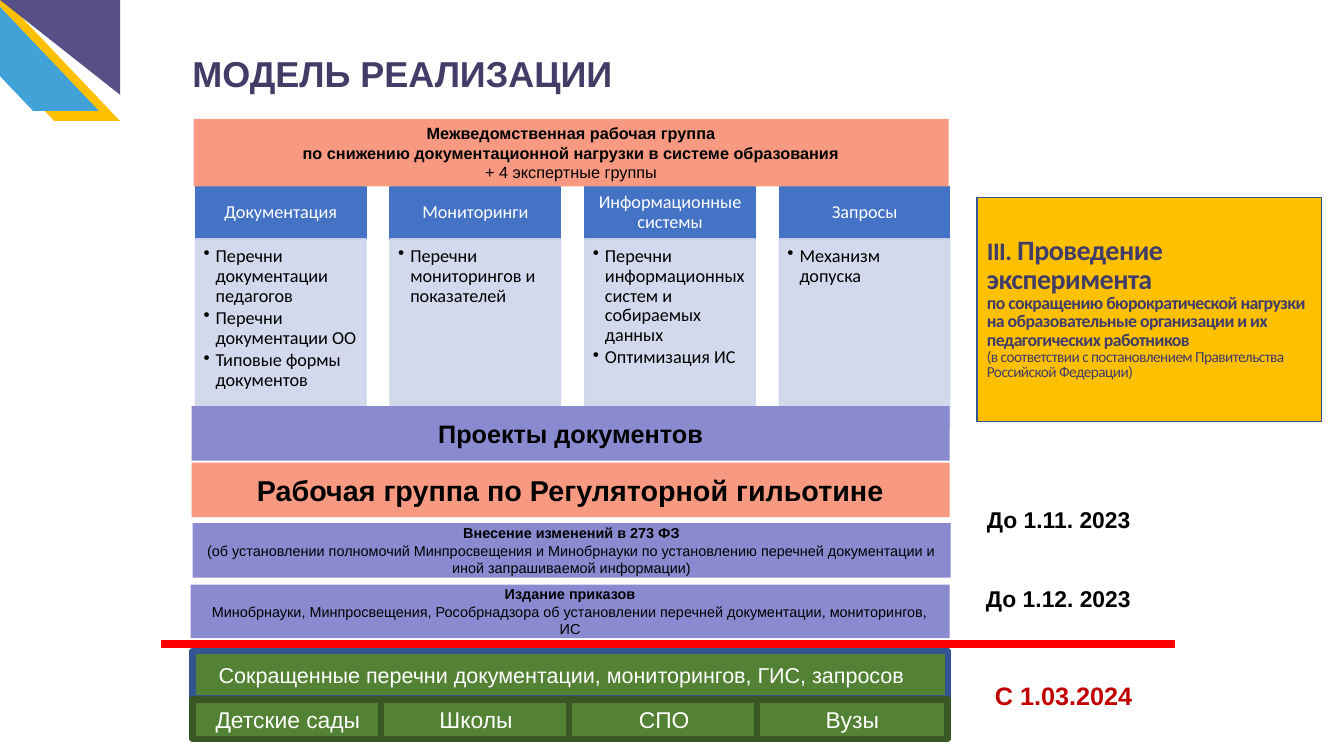
from dataclasses import dataclass

from lxml.etree import SubElement
from pptx import Presentation
from pptx.dml.color import RGBColor
from pptx.enum.shapes import MSO_CONNECTOR, MSO_SHAPE
from pptx.enum.text import MSO_ANCHOR, PP_ALIGN
from pptx.oxml.ns import qn
from pptx.util import Inches, Pt

WIDTH, HEIGHT = 13.33, 7.5


@dataclass(frozen=True)
class Theme:
    """Colours and type sizes of the slide."""
    ink: str = "000000"
    white: str = "FFFFFF"
    title: str = "423D67"
    violet: str = "565087"
    sky: str = "41A2D8"
    amber: str = "FFC000"
    coral: str = "F79A81"
    lilac: str = "8A8AD0"
    blue: str = "4472C4"
    pale: str = "CFD5EA"
    green: str = "548235"
    dark_green: str = "385723"
    navy: str = "325491"
    red: str = "FF0000"
    deadline: str = "C00000"
    sans: str = "Arial"
    human: str = "Calibri"
    heading: float = 25.7
    group: float = 20.5
    card: float = 20
    large: float = 18
    date: float = 16.3
    result: float = 15.4
    column: float = 13
    lead: float = 12.7
    council: float = 11.6
    remark: float = 10.9
    note: float = 10.3


T = Theme()

STREAMS = [
    ("Документация", ["Перечни документации педагогов", "Перечни документации ОО",
                      "Типовые формы документов"]),
    ("Мониторинги", ["Перечни мониторингов и показателей"]),
    ("Информационные системы", ["Перечни информационных систем и собираемых данных",
                                "Оптимизация ИС"]),
    ("Запросы", ["Механизм допуска"]),
]
INSTITUTIONS = ["Детские сады", "Школы", "СПО", "Вузы"]
BANDS = [
    ((14.4, 15.73, 56.19, 8.93), T.coral, [
        [("Межведомственная рабочая группа", T.council, True)],
        [("по снижению документационной нагрузки в системе образования", T.council, True)],
        [("+ 4 экспертные группы", T.council, False)]]),
    ((14.25, 53.73, 56.41, 7.2), T.lilac, [[("Проекты документов", T.large, True)]]),
    ((14.25, 61.2, 56.41, 7.2), T.coral, [
        [("Рабочая группа по Регуляторной гильотине", T.group, True)]]),
    ((14.33, 69.2, 56.41, 7.2), T.lilac, [
        [("Внесение изменений в 273 ФЗ", T.note, True)],
        [("(об установлении полномочий Минпросвещения и Минобрнауки по установлению "
          "перечней документации и иной запрашиваемой информации)", T.note, False)]]),
    ((14.18, 77.33, 56.49, 7.07), T.lilac, [
        [("Издание приказов", T.note, True)],
        [("Минобрнауки, Минпросвещения, Рособрнадзора об установлении перечней "
          "документации, мониторингов, ИС", T.note, False)]]),
]
EXPERIMENT = [
    [("III. ", T.large, True), ("Проведение эксперимента", T.card, True)],
    [("по сокращению бюрократической нагрузки на образовательные организации и их "
      "педагогических работников", T.lead, True)],
    [("(в соответствии с постановлением Правительства Российской Федерации)",
      T.remark, False)],
]
DATES = [
    ((72.69, 66.27, 12.3, 5.07), "До 1.11. 2023", T.date, T.ink),
    ((72.62, 76.67, 12.45, 5.07), "До 1.12. 2023", T.date, T.ink),
    ((73.29, 89.33, 11.85, 5.33), "С 1.03.2024", T.large, T.deadline),
]


def across(share):
    """Turn a percentage of the slide width into a length."""
    return Inches(WIDTH * share / 100)


def down(share):
    """Turn a percentage of the slide height into a length."""
    return Inches(HEIGHT * share / 100)


def place(box):
    """Turn left, top, width and height shares into lengths."""
    x, y, w, h = box
    return across(x), down(y), across(w), down(h)


def set_all(target, values):
    """Set each attribute of a target from a dict."""
    for name, value in values.items():
        setattr(target, name, value)


def add_bullet(p):
    """Give a paragraph a hanging bullet."""
    pPr = p._p.get_or_add_pPr()
    pPr.set("marL", str(Inches(0.12)))
    pPr.set("indent", str(Inches(-0.12)))
    SubElement(pPr, qn("a:buChar"), char="•")


def write(sp, paragraphs, color=T.ink, font=T.sans, frame=None, para=None,
          bullets=False, tracking=None):
    """Fill a shape with paragraphs of (text, size, bold) runs."""
    tf = sp.text_frame
    set_all(tf, {"word_wrap": True, "vertical_anchor": MSO_ANCHOR.MIDDLE, **(frame or {})})
    for i, runs in enumerate(paragraphs):
        p = tf.paragraphs[0] if i == 0 else tf.add_paragraph()
        set_all(p, {"alignment": PP_ALIGN.CENTER, **(para or {})})
        if bullets:
            add_bullet(p)
        for text, size, bold in runs:
            r = p.add_run()
            r.text = text
            set_all(r.font, {"size": Pt(size), "bold": bold, "name": font})
            r.font.color.rgb = RGBColor.from_string(color)
            if tracking:
                r._r.get_or_add_rPr().set("spc", str(tracking))


def block(s, box, fill, line=None, weight=1, kind=MSO_SHAPE.RECTANGLE):
    """Add a flat filled shape with an optional outline."""
    sp = s.shapes.add_shape(kind, *place(box))
    sp.shadow.inherit = False
    sp.fill.solid()
    sp.fill.fore_color.rgb = RGBColor.from_string(fill)
    if line:
        sp.line.color.rgb = RGBColor.from_string(line)
        sp.line.width = Pt(weight)
    else:
        sp.line.fill.background()
    return sp


def label(s, box, text, size, color, wrap):
    """Add a bold left-aligned text box."""
    sp = s.shapes.add_textbox(*place(box))
    write(sp, [[(text, size, True)]], color,
          frame={"word_wrap": wrap, "vertical_anchor": MSO_ANCHOR.TOP},
          para={"alignment": PP_ALIGN.LEFT})


def corner(s):
    """Draw the coloured corner ornament."""
    for x, y, color in ((-4.8, -0.53, T.amber), (-6.38, -1.87, T.sky)):
        sp = block(s, (x, y, 13.73, 16.53), color, kind=MSO_SHAPE.PARALLELOGRAM)
        sp.adjustments[0] = 0.95
        sp.element.spPr.get_or_add_xfrm().set("flipH", "1")
    sp = block(s, (0, 0, 8.93, 12.53), T.violet, kind=MSO_SHAPE.RIGHT_TRIANGLE)
    sp.rotation = 180


def stream(s, i, heading, items):
    """Draw one work stream: heading above a bulleted list."""
    x, w = 14.55 + 14.48 * i, 12.68
    head = block(s, (x, 24.67, w, 6.93), T.blue, T.blue)
    write(head, [[(heading, T.column, False)]], T.white, T.human,
          para={"line_spacing": 0.9})
    body = block(s, (x, 31.6, w, 24.93), T.pale, T.pale)
    for color in body.element.spPr.iter(qn("a:srgbClr")):
        SubElement(color, qn("a:alpha"), val="90000")
    write(body, [[(item, T.column, False)] for item in items], font=T.human, bullets=True,
          frame={"vertical_anchor": MSO_ANCHOR.TOP, "margin_left": Inches(0.08),
                 "margin_top": Inches(0.08)},
          para={"alignment": PP_ALIGN.LEFT, "line_spacing": 0.9, "space_after": Pt(2)})


def divider(s):
    """Draw the red line above the results."""
    cn = s.shapes.add_connector(MSO_CONNECTOR.STRAIGHT, across(12), down(85.2),
                                across(87.4), down(85.2))
    cn.line.color.rgb = RGBColor.from_string(T.red)
    cn.line.width = Pt(6)
    SubElement(cn._element.spPr, qn("a:effectLst"))


def results(s):
    """Draw the reduced lists and the institutions below them."""
    sp = block(s, (14.33, 86.13, 56.19, 6.27), T.green, T.navy, 4.5)
    write(sp, [[("Сокращенные перечни документации, мониторингов, ГИС, запросов",
                 T.result, False)]], T.white, frame={"margin_right": Inches(0.27)})
    for i, name in enumerate(INSTITUTIONS):
        sp = block(s, (14.33 + 14 * i, 92.53, 14.18, 5.2), T.green, T.dark_green, 4.5)
        write(sp, [[(name, T.date, False)]], T.white)


def main():
    """Build the slide and save it."""
    prs = Presentation()
    prs.slide_width, prs.slide_height = Inches(WIDTH), Inches(HEIGHT)
    s = prs.slides.add_slide(prs.slide_layouts[6])
    corner(s)
    label(s, (13.58, 6.13, 61.52, 7.07), "МОДЕЛЬ РЕАЛИЗАЦИИ", T.heading, T.title, True)
    for i, (heading, items) in enumerate(STREAMS):
        stream(s, i, heading, items)
    for box, fill, paragraphs in BANDS:
        write(block(s, box, fill), paragraphs)
    divider(s)
    results(s)
    for box, text, size, color in DATES:
        label(s, box, text, size, color, False)
    card = block(s, (72.69, 26.13, 25.66, 29.6), T.amber, T.navy)
    write(card, EXPERIMENT, T.title, T.human, tracking=-40,
          para={"alignment": PP_ALIGN.LEFT, "line_spacing": 0.85})
    prs.save("out.pptx")


if __name__ == "__main__":
    main()
